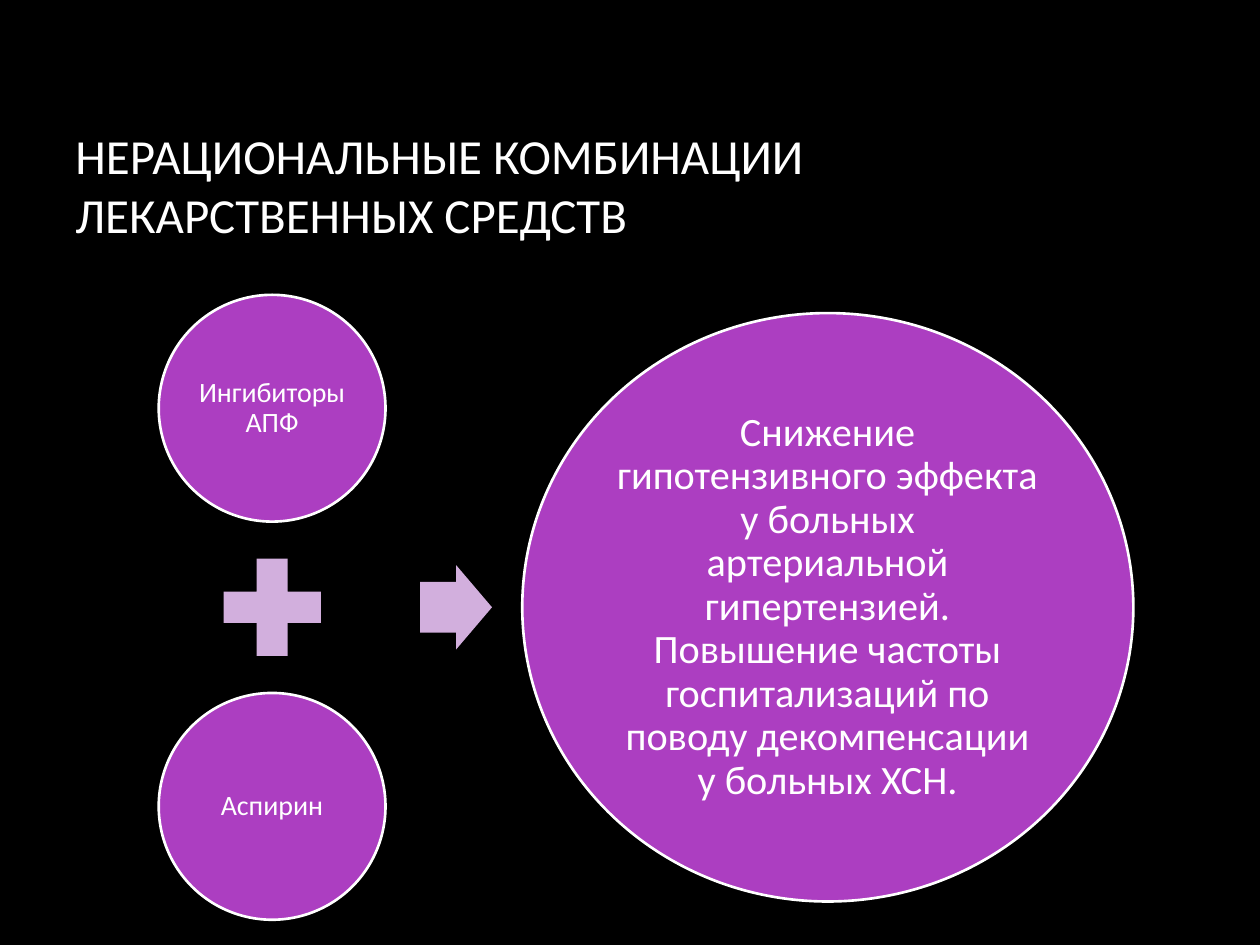
"""Build a slide on irrational drug combinations."""
from dataclasses import dataclass

from pptx import Presentation
from pptx.dml.color import RGBColor
from pptx.enum.shapes import MSO_SHAPE
from pptx.enum.text import MSO_ANCHOR, PP_ALIGN
from pptx.util import Inches, Pt


@dataclass(frozen=True)
class Theme:
    font: str = "Calibri"
    background: str = "000000"
    text: str = "FFFFFF"
    circle: str = "AC3EC1"
    operator: str = "D2AFDD"
    outline_width: float = 1.5
    title_size: int = 28
    cause_size: int = 16
    effect_size: int = 23


def write_text(text_frame, text, *, theme, size, align=PP_ALIGN.LEFT, spacing=1.0, inset=None):
    text_frame.word_wrap = True
    text_frame.vertical_anchor = MSO_ANCHOR.MIDDLE
    if inset is not None:
        text_frame.margin_left = text_frame.margin_right = Inches(inset)
        text_frame.margin_top = text_frame.margin_bottom = Inches(inset)
    paragraph = text_frame.paragraphs[0]
    paragraph.text = text
    paragraph.alignment = align
    paragraph.line_spacing = spacing
    for run in paragraph.runs:
        run.font.name = theme.font
        run.font.size = Pt(size)
        run.font.color.rgb = RGBColor.from_string(theme.text)


class SlideBuilder:
    def __init__(self, slide, theme):
        self.slide = slide
        self.theme = theme
        fill = slide.background.fill
        fill.solid()
        fill.fore_color.rgb = RGBColor.from_string(theme.background)

    def title(self, text, left, top, width, height):
        box = self.slide.shapes.add_textbox(
            Inches(left), Inches(top), Inches(width), Inches(height))
        write_text(box.text_frame, text, theme=self.theme, size=self.theme.title_size)

    def centred_shape(self, kind, center_x, center_y, width, height, color):
        shape = self.slide.shapes.add_shape(
            kind, Inches(center_x - width / 2), Inches(center_y - height / 2),
            Inches(width), Inches(height))
        shape.shadow.inherit = False
        shape.fill.solid()
        shape.fill.fore_color.rgb = RGBColor.from_string(color)
        shape.line.fill.background()
        return shape

    def circle(self, text, center_x, center_y, width, height, size, inset):
        shape = self.centred_shape(
            MSO_SHAPE.OVAL, center_x, center_y, width, height, self.theme.circle)
        shape.line.color.rgb = RGBColor.from_string(self.theme.text)
        shape.line.width = Pt(self.theme.outline_width)
        write_text(shape.text_frame, text, theme=self.theme, size=size,
                   align=PP_ALIGN.CENTER, spacing=0.9, inset=inset)

    def operator(self, kind, center_x, center_y, width, height):
        return self.centred_shape(
            kind, center_x, center_y, width, height, self.theme.operator)


def main():
    presentation = Presentation()
    presentation.slide_width = Inches(10)
    presentation.slide_height = Inches(7.5)
    slide = presentation.slides.add_slide(presentation.slide_layouts[6])
    theme = Theme()
    builder = SlideBuilder(slide, theme)

    builder.title("НЕРАЦИОНАЛЬНЫЕ КОМБИНАЦИИ\nЛЕКАРСТВЕННЫХ СРЕДСТВ", 0.5, 0.67, 8.5, 1.59)

    cause_x, middle_y, cause_offset = 2.16, 4.82, 1.58
    for text, direction in (("Ингибиторы АПФ", -1), ("Аспирин", 1)):
        builder.circle(text, cause_x, middle_y + direction * cause_offset,
                       1.8, 1.8, theme.cause_size, 0.02)
    builder.operator(MSO_SHAPE.MATH_PLUS, cause_x, middle_y, 1.05, 1.05)
    arrow = builder.operator(MSO_SHAPE.RIGHT_ARROW, 3.62, middle_y, 0.57, 0.67)
    arrow.adjustments[0] = 0.6

    builder.circle(
        "Снижение гипотензивного эффекта у больных артериальной гипертензией. "
        "Повышение частоты госпитализаций по поводу декомпенсации у больных ХСН.",
        6.57, middle_y, 4.85, 4.67, theme.effect_size, 0.03)

    presentation.save("out.pptx")


if __name__ == "__main__":
    main()
